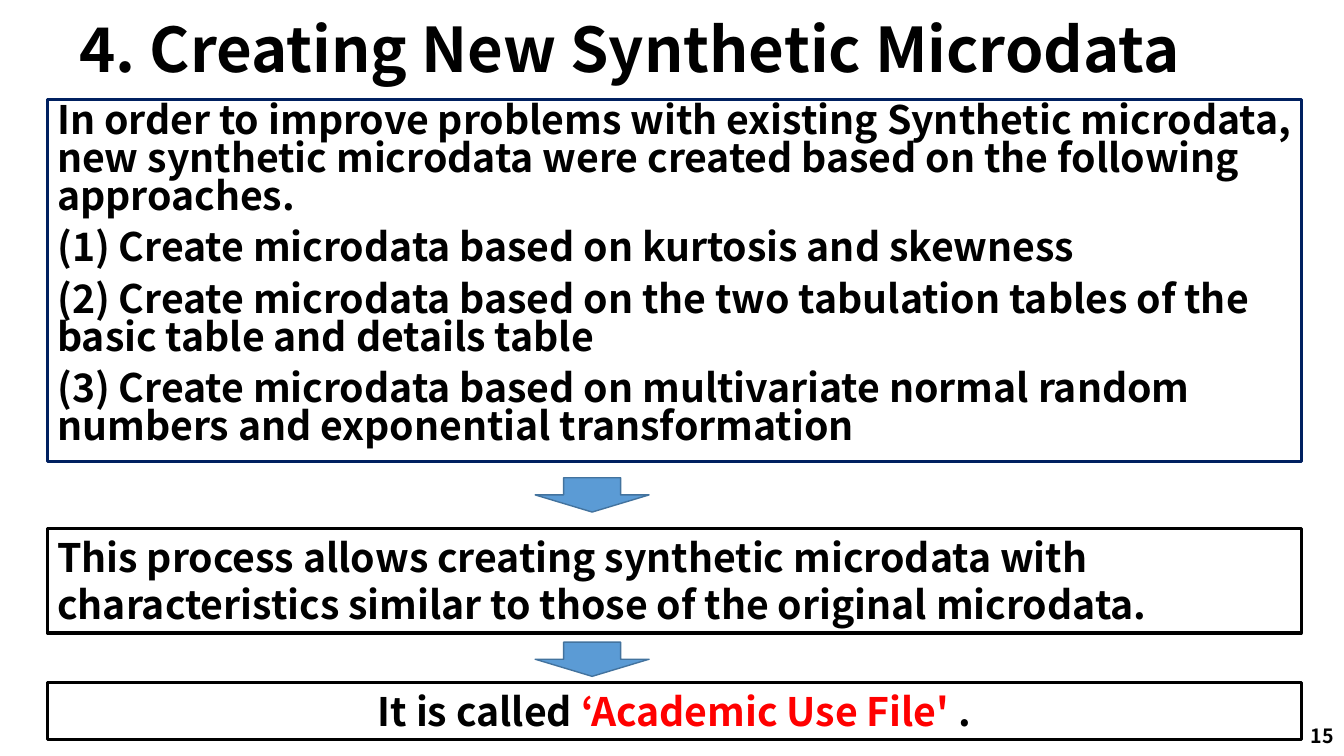
from pptx import Presentation
from pptx.dml.color import RGBColor
from pptx.enum.shapes import MSO_SHAPE as Shape
from pptx.enum.text import MSO_ANCHOR as Anchor, PP_ALIGN as Align
from pptx.util import Pt

FONT = "Noto Sans CJK JP"
BLACK = "000000"
NAVY = "002060"
RED = "FF0000"
BOX_LEFT, BOX_WIDTH = 33.84, 895.68
APPROACHES = [
    "In order to improve problems with existing Synthetic microdata, "
    "new synthetic microdata were created based on the following approaches.",
    "(1) Create microdata based on kurtosis and skewness",
    "(2) Create microdata based on the two tabulation tables of the "
    "basic table and details table",
    "(3) Create microdata based on multivariate normal random numbers "
    "and exponential transformation",
]
RESULT = ("This process allows creating synthetic microdata with "
          "characteristics similar to those of the original microdata.")


def color(value):
    return RGBColor.from_string(value)


def add_run(paragraph, text, size=28, ink=BLACK):
    run = paragraph.add_run()
    run.text = text
    run.font.name = FONT
    run.font.size = Pt(size)
    run.font.bold = True
    run.font.color.rgb = color(ink)


def write(frame, paragraphs, size=28, align=Align.LEFT, anchor=Anchor.TOP,
          line_spacing=1.0, space_before=0):
    frame.word_wrap = True
    frame.vertical_anchor = anchor
    for index, runs in enumerate(paragraphs):
        paragraph = frame.add_paragraph() if index else frame.paragraphs[0]
        paragraph.alignment = align
        paragraph.line_spacing = line_spacing
        paragraph.space_before = Pt(space_before)
        for text, ink in runs:
            add_run(paragraph, text, size, ink)


def add_label(slide, text, left, top, width, height, **style):
    label = slide.shapes.add_textbox(Pt(left), Pt(top), Pt(width), Pt(height))
    write(label.text_frame, [[(text, BLACK)]], anchor=Anchor.MIDDLE, **style)


def add_box(slide, paragraphs, top, height, border=BLACK, **style):
    box = slide.shapes.add_shape(
        Shape.RECTANGLE, Pt(BOX_LEFT), Pt(top), Pt(BOX_WIDTH), Pt(height))
    box.shadow.inherit = False
    box.fill.background()
    box.line.color.rgb = color(border)
    box.line.width = Pt(2.25)
    write(box.text_frame, paragraphs, **style)


def add_down_arrow(slide, top):
    arrow = slide.shapes.add_shape(
        Shape.DOWN_ARROW, Pt(382.32), Pt(top), Pt(81.36), Pt(24.48))
    arrow.shadow.inherit = False
    arrow.fill.solid()
    arrow.fill.fore_color.rgb = color("5B9BD5")
    arrow.line.color.rgb = color("43739E")
    arrow.line.width = Pt(1)


def main():
    deck = Presentation()
    deck.slide_width, deck.slide_height = Pt(960), Pt(540)
    slide = deck.slides.add_slide(deck.slide_layouts[6])

    add_label(slide, "4. Creating New Synthetic Microdata",
              49.68, 0, 870.48, 75.6, size=44, line_spacing=0.9)
    add_box(slide, [[(text, BLACK)] for text in APPROACHES], 71.28, 258.48,
            border=NAVY, line_spacing=0.8, space_before=10)
    add_label(slide, "15", 743.76, 511.2, 216, 28.8, size=14, align=Align.RIGHT)
    add_box(slide, [[(RESULT, BLACK)]], 377.28, 74.88)
    add_box(slide, [[("It is called ", BLACK), ("‘Academic Use File' ", RED),
                     (".", BLACK)]], 487.44, 41.04, align=Align.CENTER)
    for top in (341.28, 458.64):
        add_down_arrow(slide, top)

    deck.save("out.pptx")


if __name__ == "__main__":
    main()
